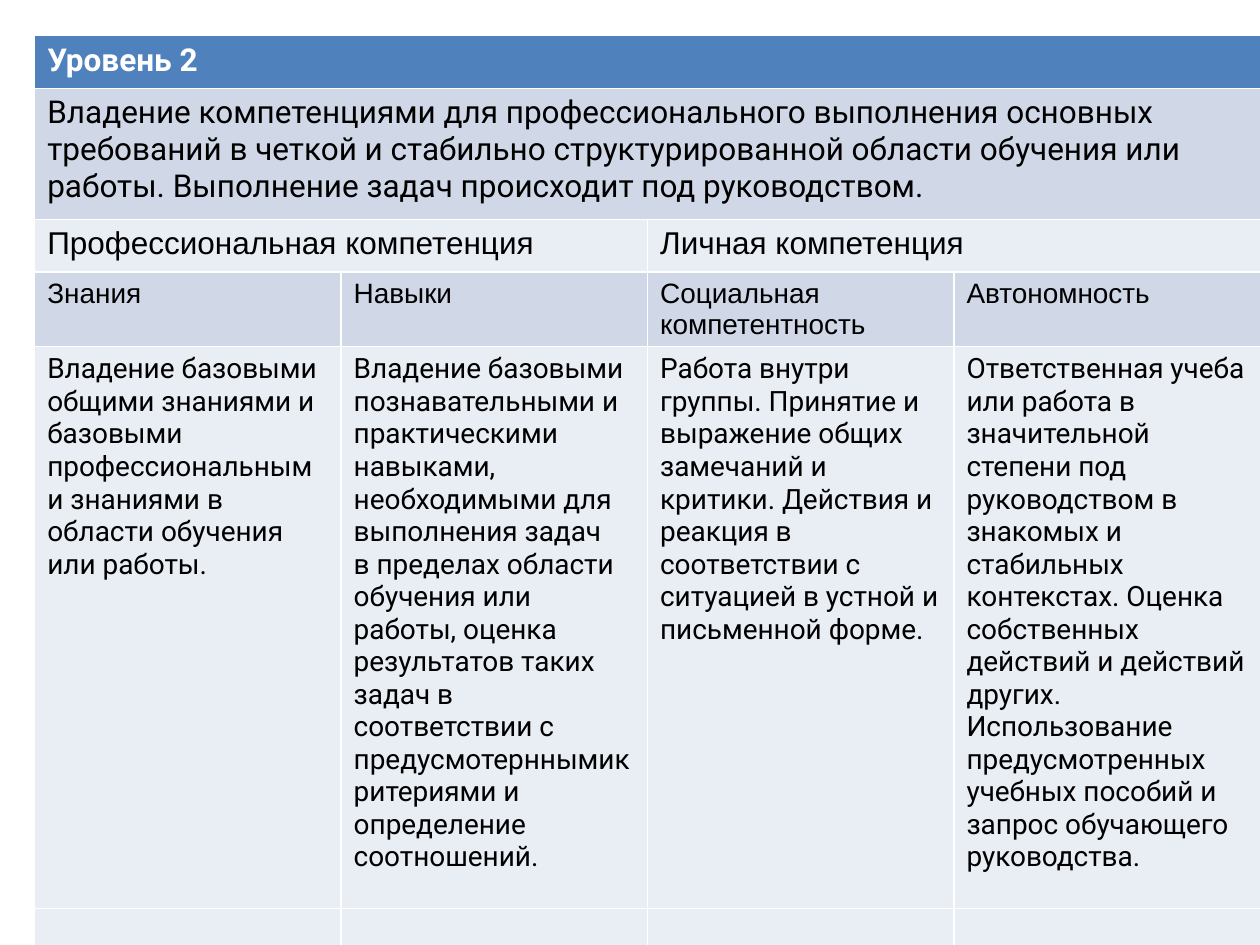
from pptx import Presentation
from pptx.dml.color import RGBColor
from pptx.util import Cm, Pt

WHITE = RGBColor(0xFF, 0xFF, 0xFF)
BLACK = RGBColor(0x00, 0x00, 0x00)
BLUE = RGBColor(0x4F, 0x81, 0xBD)
DARK_BAND = RGBColor(0xD0, 0xD8, 0xE8)
LIGHT_BAND = RGBColor(0xE9, 0xED, 0xF4)

COLUMNS = 4
WIDTH = 24.71

# Row height in cm, fill, font, size, text colour, paragraphs of each cell.
# Cells share the four columns equally.
LEVEL_ROWS = [
    (1.06, BLUE, "Roboto", 18, WHITE, [["Уровень 2"]]),
    (2.64, DARK_BAND, "Roboto", 18, BLACK, [[
        "Владение компетенциями для профессионального выполнения основных "
        "требований в четкой и стабильно структурированной области обучения или "
        "работы. Выполнение задач происходит под руководством."]]),
    (1.06, LIGHT_BAND, "Arial", 18, BLACK,
     [["Профессиональная компетенция"], ["Личная компетенция"]]),
    (1.06, DARK_BAND, "Arial", 16, BLACK,
     [["Знания"], ["Навыки"], ["Социальная компетентность"], ["Автономность"]]),
    (11.33, LIGHT_BAND, "Roboto", 16, BLACK, [
        ["Владение базовыми общими знаниями и базовыми профессиональными "
         "знаниями в области обучения или работы."],
        ["Владение базовыми познавательными и практическими навыками, "
         "необходимыми для выполнения задач",
         "в пределах области обучения или работы, оценка результатов таких задач "
         "в соответствии с предусмотерннымикритериями и определение соотношений."],
        ["Работа внутри группы. Принятие и выражение общих замечаний и критики. "
         "Действия и реакция в соответствии с ситуацией в устной и письменной форме."],
        ["Ответственная учеба или работа в значительной степени под руководством "
         "в знакомых и стабильных контекстах. Оценка собственных действий и "
         "действий других. Использование предусмотренных учебных пособий и "
         "запрос обучающего руководства."],
    ]),
    (11.33, LIGHT_BAND, "Roboto", 16, BLACK, [[]] * COLUMNS),
]

prs = Presentation()
prs.slide_width, prs.slide_height = Cm(25.4), Cm(19.05)
slide = prs.slides.add_slide(prs.slide_layouts[6])

total_height = sum(row[0] for row in LEVEL_ROWS)
levels = slide.shapes.add_table(
    len(LEVEL_ROWS), COLUMNS, Cm(0.7), Cm(0.72), Cm(WIDTH), Cm(total_height)).table
for column in levels.columns:
    column.width = Cm(WIDTH / COLUMNS)

for row, (height, fill, font, size, color, entries) in enumerate(LEVEL_ROWS):
    levels.rows[row].height = Cm(height)
    span = COLUMNS // len(entries)
    for index, paragraphs in enumerate(entries):
        first = index * span
        cell = levels.cell(row, first)
        if span > 1:
            cell.merge(levels.cell(row, first + span - 1))
        cell.fill.solid()
        cell.fill.fore_color.rgb = fill
        for number, wording in enumerate(paragraphs):
            frame = cell.text_frame
            paragraph = frame.add_paragraph() if number else frame.paragraphs[0]
            run = paragraph.add_run()
            run.text = wording
            run.font.name = font
            run.font.size = Pt(size)
            run.font.bold = row == 0
            run.font.color.rgb = color

prs.save("out.pptx")
